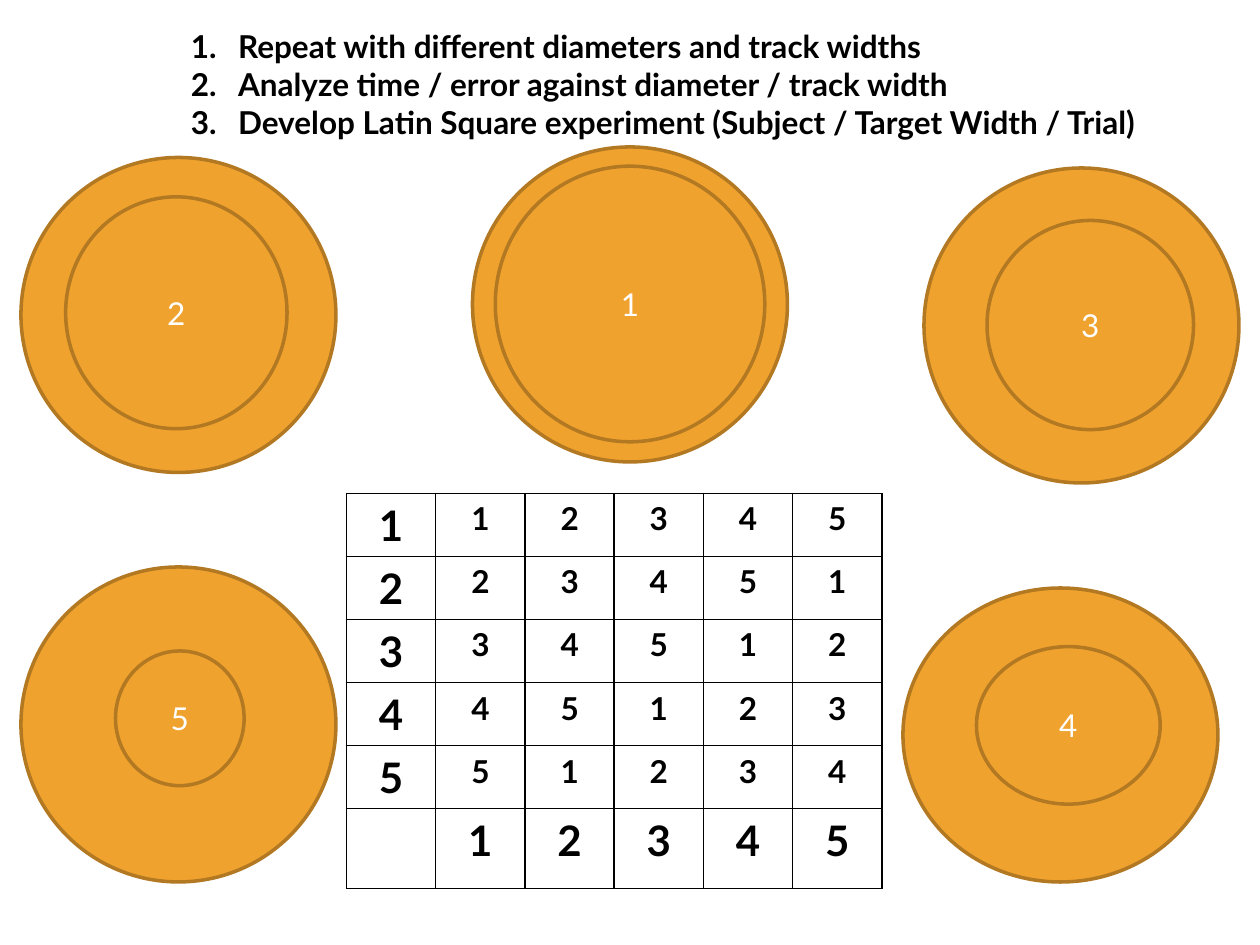
from dataclasses import dataclass

import pptx
import pptx.dml.color
import pptx.enum.shapes
import pptx.enum.text
import pptx.oxml
import pptx.oxml.ns
import pptx.util

Pt = pptx.util.Pt
RGB = pptx.dml.color.RGBColor
CENTER = pptx.enum.text.PP_ALIGN.CENTER


@dataclass(frozen=True)
class Theme:
    font: str = "Lato"
    ink: str = "000000"
    label: str = "FFFFFF"
    disc: str = "F0A22E"
    edge: str = "B27822"
    body: int = 18
    heading: int = 24


THEME = Theme()

STEPS = [
    "Repeat with different diameters and track widths",
    "Analyze time / error against diameter / track width",
    "Develop Latin Square experiment (Subject / Target Width / Trial)",
]

# label, outer circle, inner circle; each as left, top, width, height
TRACKS = [
    ("4", (516, 336, 180, 168), (558, 369.5, 105, 90)),
    ("1", (270, 84, 180, 180), (283, 95, 154, 157.5)),
    ("3", (528, 96, 180, 180), (564, 126, 118, 119.5)),
    ("5", (12, 324, 180, 180), (66, 372, 73.5, 77)),
    ("2", (12, 90, 180, 180), (37.5, 112.5, 126.5, 132.5)),
]

ORDER = 5


def add_run(p, text, size, color, bold=False):
    r = p.add_run()
    r.text = text
    r.font.name = THEME.font
    r.font.size = Pt(size)
    r.font.bold = bold
    r.font.color.rgb = RGB.from_string(color)


def add_xml(parent, xml):
    ns = pptx.oxml.ns.nsdecls("a")
    parent.append(pptx.oxml.parse_xml(xml.replace("NS", ns, 1)))


def add_steps(slide):
    box = slide.shapes.add_textbox(Pt(102), Pt(12), Pt(606), Pt(73))
    tf = box.text_frame
    tf.word_wrap = True
    for i, step in enumerate(STEPS):
        p = tf.add_paragraph() if i else tf.paragraphs[0]
        pPr = p._p.get_or_add_pPr()
        pPr.set("marL", str(Pt(27)))
        pPr.set("indent", str(-Pt(27)))
        add_xml(pPr, '<a:buFont NS typeface="+mj-lt"/>')
        add_xml(pPr, '<a:buAutoNum NS type="arabicPeriod"/>')
        add_run(p, step, THEME.body, THEME.ink, bold=True)


def add_disc(group, bounds):
    oval = pptx.enum.shapes.MSO_SHAPE.OVAL
    sp = group.shapes.add_shape(oval, *map(Pt, bounds))
    sp.shadow.inherit = False
    sp.fill.solid()
    sp.fill.fore_color.rgb = RGB.from_string(THEME.disc)
    sp.line.color.rgb = RGB.from_string(THEME.edge)
    sp.line.width = Pt(2)
    return sp


def add_track(slide, label, outer, inner):
    """Group two discs whose gap is the circular track."""
    group = slide.shapes.add_group_shape()
    add_disc(group, outer)
    tf = add_disc(group, inner).text_frame
    tf.vertical_anchor = pptx.enum.text.MSO_ANCHOR.MIDDLE
    p = tf.paragraphs[0]
    p.alignment = CENTER
    add_run(p, label, THEME.body, THEME.label)


def style_cell(cell):
    tcPr = cell._tc.get_or_add_tcPr()
    for side in ("lnL", "lnR", "lnT", "lnB"):
        add_xml(tcPr, f'<a:{side} NS w="{Pt(1)}"><a:solidFill>'
                      f'<a:srgbClr val="{THEME.ink}"/></a:solidFill></a:{side}>')
    cell.fill.background()


def latin_square_text(row, col):
    """Headings run down the first column and along the last row."""
    if row == ORDER:
        return str(col) if col else ""
    if col == 0:
        return str(row + 1)
    return str((row + col - 1) % ORDER + 1)


def add_latin_square(slide):
    n = ORDER + 1
    frame = slide.shapes.add_table(n, n, Pt(198), Pt(282), Pt(306), Pt(225.5))
    table = frame.table
    table.first_row = False
    table.horz_banding = False
    for col in table.columns:
        col.width = Pt(51)
    for i, row in enumerate(table.rows):
        row.height = Pt(45.5 if i == ORDER else 36)
        for j, cell in enumerate(row.cells):
            style_cell(cell)
            text = latin_square_text(i, j)
            if text:
                p = cell.text_frame.paragraphs[0]
                p.alignment = CENTER
                is_heading = j == 0 or i == ORDER
                size = THEME.heading if is_heading else THEME.body
                add_run(p, text, size, THEME.ink, bold=True)


def main():
    prs = pptx.Presentation()
    prs.slide_width, prs.slide_height = Pt(720), Pt(540)
    slide = prs.slides.add_slide(prs.slide_layouts[6])
    for track in TRACKS:
        add_track(slide, *track)
    add_steps(slide)
    add_latin_square(slide)
    prs.save("out.pptx")


if __name__ == "__main__":
    main()
